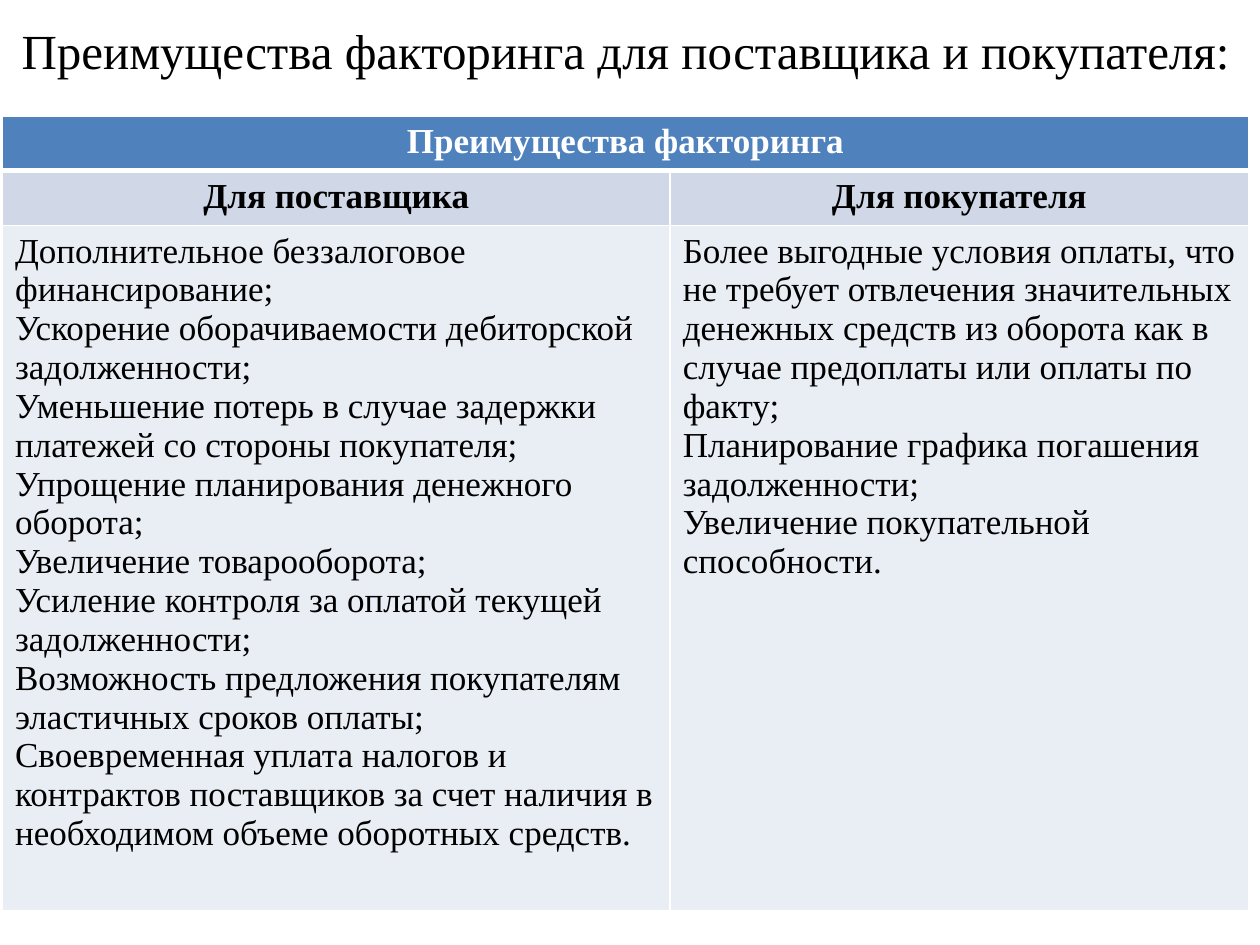
from lxml.etree import SubElement as Sub
from pptx import Presentation
from pptx.dml.color import RGBColor
from pptx.enum.text import MSO_ANCHOR as Anchor, MSO_AUTO_SIZE as Fit, PP_ALIGN as Align
from pptx.oxml.ns import qn
from pptx.util import Cm, Pt

FONT = "Times New Roman"
WHITE, BLACK = "FFFFFF", "000000"
LEFT, WIDTH = Cm(0.05), Cm(25.12)
COLS = (13.46, 11.66)
ROWS = (1.1, 1.1, 13.8)
FILLS = ("4F81BD", "D0D8E8", "E9EDF4")
SELLER = (
    "Дополнительное беззалоговое финансирование;",
    "Ускорение оборачиваемости дебиторской задолженности;",
    "Уменьшение потерь в случае задержки платежей со стороны покупателя;",
    "Упрощение планирования денежного оборота;",
    "Увеличение товарооборота;",
    "Усиление контроля за оплатой текущей задолженности;",
    "Возможность предложения покупателям эластичных сроков оплаты;",
    "Своевременная уплата налогов и контрактов поставщиков за счет наличия "
    "в необходимом объеме оборотных средств.",
)
BUYER = (
    "Более выгодные условия оплаты, что не требует отвлечения значительных "
    "денежных средств из оборота как в случае предоплаты или оплаты по факту;",
    "Планирование графика погашения задолженности;",
    "Увеличение покупательной способности.",
)
CELLS = (
    (("Преимущества факторинга",), ()),
    (("Для поставщика",), ("Для покупателя",)),
    (SELLER, BUYER),
)


def color(code):
    """Turn a hex string into a colour."""
    return RGBColor.from_string(code)


def write(frame, lines, size, tint=BLACK, bold=False, align=Align.LEFT):
    """Fill a text frame with one paragraph per line."""
    for n, line in enumerate(lines):
        para = frame.add_paragraph() if n else frame.paragraphs[0]
        para.alignment = align
        run = para.add_run()
        run.text = line
        font = run.font
        font.name, font.size, font.bold = FONT, Pt(size), bold
        font.color.rgb = color(tint)


def border(cell, top, bottom):
    """Draw white cell edges with the given top and bottom widths."""
    props = cell._tc.get_or_add_tcPr()
    edges = (("L", 1), ("R", 1), ("T", top), ("B", bottom))
    for n, (side, width) in enumerate(edges):
        line = Sub(props, qn(f"a:ln{side}"), w=str(Pt(width)))
        Sub(Sub(line, qn("a:solidFill")), qn("a:srgbClr"), val=WHITE)
        props.insert(n, line)


def add_title(slide, text):
    """Place the one-line heading in the title placeholder."""
    title = slide.shapes.title
    title.left, title.top, title.width, title.height = LEFT, Cm(0.28), WIDTH, Cm(1.45)
    frame = title.text_frame
    frame.word_wrap = False
    frame.auto_size = Fit.SHAPE_TO_FIT_TEXT
    frame.vertical_anchor = Anchor.TOP
    write(frame, [text], 28, align=Align.CENTER)


def add_grid(slide):
    """Build the table of benefits."""
    shape = slide.shapes.add_table(
        len(ROWS), len(COLS), LEFT, Cm(2.34), WIDTH, Cm(sum(ROWS)))
    table = shape.table
    for col, width in zip(table.columns, COLS):
        col.width = Cm(width)
    table.cell(0, 0).merge(table.cell(0, 1))
    for r, height in enumerate(ROWS):
        table.rows[r].height = Cm(height)
        head = r < 2
        for c, lines in enumerate(CELLS[r]):
            cell = table.cell(r, c)
            cell.fill.solid()
            cell.fill.fore_color.rgb = color(FILLS[r])
            border(cell, 3 if r == 1 else 1, 3 if r == 0 else 1)
            write(cell.text_frame, lines, 20, BLACK if r else WHITE, head,
                  Align.CENTER if head else Align.LEFT)


def main():
    """Build and save the slide."""
    deck = Presentation()
    deck.slide_width, deck.slide_height = Cm(25.4), Cm(19.05)
    slide = deck.slides.add_slide(deck.slide_layouts[5])
    add_title(slide, "Преимущества факторинга для поставщика и покупателя:")
    add_grid(slide)
    deck.save("out.pptx")


if __name__ == "__main__":
    main()
